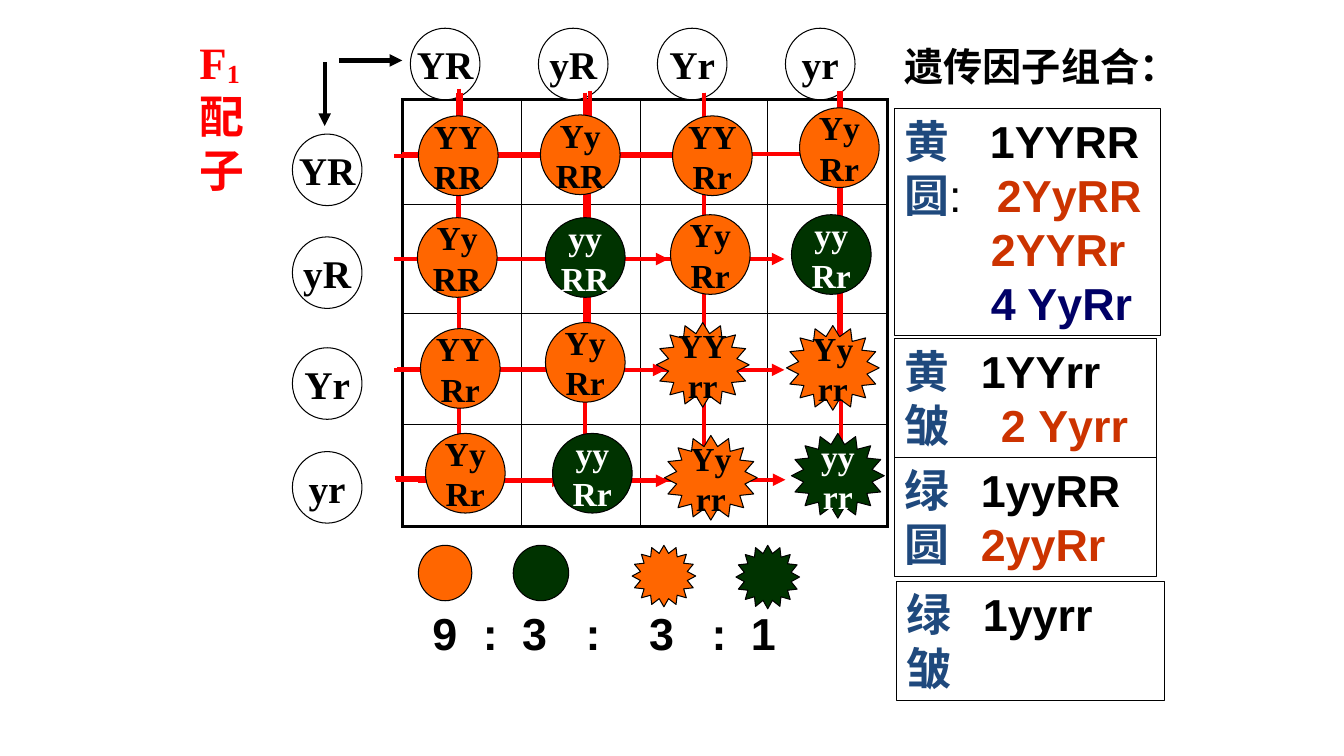
from dataclasses import dataclass

from lxml import etree
from pptx import Presentation
from pptx.dml.color import RGBColor
from pptx.enum.shapes import MSO_CONNECTOR, MSO_SHAPE
from pptx.enum.text import MSO_ANCHOR, MSO_AUTO_SIZE, PP_ALIGN
from pptx.oxml.ns import qn
from pptx.util import Pt

PX = 9144  # 100 px to the inch
ELLIPSE, STAR = MSO_SHAPE.OVAL, MSO_SHAPE.STAR_16_POINT
STRAIGHT = MSO_CONNECTOR.STRAIGHT
MIDDLE, LEFT, CENTER = MSO_ANCHOR.MIDDLE, PP_ALIGN.LEFT, PP_ALIGN.CENTER
SERIF, SANS, CJK = "Times New Roman", "Arial", "Noto Sans CJK SC"
COLORS = {
    "black": "000000", "white": "FFFFFF", "red": "FF0000", "yellow": "FF6600",
    "green": "003300", "blue": "1F497D", "rust": "CC3300", "navy": "000066",
}


@dataclass
class Span:
    text: str
    color: str = "black"
    bold: bool = True
    font: str = SANS


@dataclass
class Line:
    spans: list[Span]
    tabs: tuple[int, ...] = ()


@dataclass
class TextBox:
    x: int
    y: int
    w: int
    h: int
    lines: list[Line]
    framed: bool = True


@dataclass
class Offspring:
    """Genes, place, and the two arrows that meet at the offspring."""
    genes: str
    x: int
    y: int
    row_start: int
    row_end: int
    row_y: int
    col_x: int
    col_top: int

    @property
    def color(self) -> str:
        return "yellow" if "Y" in self.genes else "green"

    @property
    def round(self) -> bool:
        return "R" in self.genes


@dataclass
class Seed:
    shape: int
    color: str
    x: int
    w: int
    h: int


TABLE_X, TABLE_Y = 399, 99
COLUMNS, ROWS = (118, 118, 126, 119), (104, 108, 110, 101)
TOP_GAMETES = {"YR": 407, "yR": 534, "Yr": 652, "yr": 779}
LEFT_GAMETES = {"YR": 133, "yR": 235, "Yr": 345, "yr": 448}
OFFSPRING = [
    Offspring("YY RR", 415, 115, 394, 449, 155, 457, 92),
    Offspring("Yy RR", 536, 114, 404, 585, 153, 585, 90),
    Offspring("YY Rr", 667, 115, 391, 690, 155, 698, 92),
    Offspring("Yy Rr", 793, 107, 399, 821, 153, 832, 90),
    Offspring("Yy RR", 414, 216, 391, 446, 257, 454, 92),
    Offspring("yy RR", 541, 216, 391, 556, 257, 580, 92),
    Offspring("Yy Rr", 665, 213, 415, 663, 257, 698, 92),
    Offspring("yy Rr", 785, 213, 399, 778, 257, 832, 92),
    Offspring("YY Rr", 417, 326, 392, 447, 367, 455, 99),
    Offspring("Yy Rr", 541, 320, 394, 560, 366, 584, 98),
    Offspring("YY rr", 651, 320, 391, 660, 367, 698, 99),
    Offspring("Yy rr", 780, 323, 398, 778, 367, 832, 100),
    Offspring("Yy Rr", 422, 430, 392, 447, 474, 455, 88),
    Offspring("yy Rr", 548, 430, 415, 560, 477, 580, 92),
    Offspring("Yy rr", 659, 432, 415, 663, 477, 698, 92),
    Offspring("yy rr", 785, 430, 393, 779, 476, 834, 90),
]
LEGEND = [
    Seed(ELLIPSE, "yellow", 415, 53, 55), Seed(ELLIPSE, "green", 509, 55, 55),
    Seed(STAR, "yellow", 627, 63, 61), Seed(STAR, "green", 730, 63, 63),
]
TEXT_BOXES = [
    TextBox(188, 30, 69, 170, [
        Line([Span("F", "red", font=SERIF), Span("1", "red", font=SERIF), Span("配子", "red")]),
    ], framed=False),
    TextBox(383, 596, 539, 63, [
        Line([Span("\t9\t:\t3\t:\t3\t:\t1")], (36, 86, 125, 188, 251, 313, 352)),
    ], framed=False),
    TextBox(887, 108, 264, 225, [
        Line([Span("黄", "blue"), Span("\t1YYRR")], (85,)),
        Line([Span("圆", "blue"), Span(":", bold=False), Span("\t2YyRR", "rust")], (92,)),
        Line([Span("\t2YYRr", "rust")], (86,)),
        Line([Span("\t4 YyRr", "navy")], (86,)),
    ]),
    TextBox(887, 336, 260, 118, [
        Line([Span("黄", "blue", font=CJK), Span("\t1YYrr")], (76,)),
        Line([Span("皱", "blue", font=CJK), Span("\t2 Yyrr", "rust")], (96,)),
    ]),
    TextBox(887, 454, 260, 118, [
        Line([Span("绿", "blue", font=CJK), Span("\t1yyRR")], (76,)),
        Line([Span("圆", "blue", font=CJK), Span("\t2yyRr", "rust")], (76,)),
    ]),
    TextBox(889, 577, 266, 118, [
        Line([Span("绿", "blue", font=CJK), Span("\t1yyrr")], (76,)),
        Line([Span("皱", "blue", font=CJK)]),
    ]),
]


def rgb(name: str) -> RGBColor:
    return RGBColor.from_string(COLORS[name])


def px(*lengths: int) -> list[int]:
    return [n * PX for n in lengths]


def format_run(r, size: int, color: str, font: str, bold: bool = True) -> None:
    r.font.size, r.font.bold, r.font.name = Pt(size), bold, font
    r.font.color.rgb = rgb(color)
    if not r.text.isascii():
        etree.SubElement(r._r.get_or_add_rPr(), qn("a:ea"), typeface=CJK)


def add_figure(slide, shape: int, x: int, y: int, w: int, h: int, fill: str,
               text: str = "", size: int = 24, color: str = "black") -> None:
    sp = slide.shapes.add_shape(shape, *px(x, y, w, h))
    sp.shadow.inherit = False
    sp.fill.solid()
    sp.fill.fore_color.rgb = rgb(fill)
    sp.line.color.rgb, sp.line.width = rgb("black"), Pt(0.75)
    tf = sp.text_frame
    tf.text, tf.word_wrap, tf.vertical_anchor = text, False, MIDDLE
    for p in tf.paragraphs:
        p.alignment = CENTER
        for r in p.runs:
            format_run(r, size, color, SERIF)


def add_arrow(slide, x1: int, y1: int, x2: int, y2: int, color: str) -> None:
    cxn = slide.shapes.add_connector(STRAIGHT, *px(x1, y1, x2, y2))
    cxn.line.color.rgb, cxn.line.width = rgb(color), Pt(3)
    etree.SubElement(cxn.line._get_or_add_ln(), qn("a:tailEnd"), type="triangle")
    etree.SubElement(cxn._element.spPr, qn("a:effectLst"))


def add_text_box(slide, box: TextBox) -> None:
    sp = slide.shapes.add_textbox(*px(box.x, box.y, box.w, box.h))
    if box.framed:
        sp.line.color.rgb, sp.line.width = rgb("black"), Pt(0.75)
    tf = sp.text_frame
    tf.word_wrap = True
    for i, line in enumerate(box.lines):
        p = tf.add_paragraph() if i else tf.paragraphs[0]
        if line.tabs:
            tab_list = etree.SubElement(p._p.get_or_add_pPr(), qn("a:tabLst"))
            for pos in line.tabs:
                etree.SubElement(tab_list, qn("a:tab"), pos=str(pos * PX), algn="l")
        p.line_spacing = Pt(38.5)
        for span in line.spans:
            r = p.add_run()
            r.text = span.text
            format_run(r, 32, span.color, span.font, span.bold)
            if span.text == "1":
                r._r.get_or_add_rPr().set("baseline", "-10000")


def add_square(slide) -> None:
    """Draw the empty Punnett square with a heavier outer border."""
    frame = slide.shapes.add_table(len(ROWS), len(COLUMNS),
                                   *px(TABLE_X, TABLE_Y, sum(COLUMNS), sum(ROWS)))
    table = frame.table
    table.first_row = table.horz_banding = False
    for column, w in zip(table.columns, COLUMNS):
        column.width = w * PX
    for i, h in enumerate(ROWS):
        table.rows[i].height = h * PX
        for j in range(len(COLUMNS)):
            outer = {"lnL": j == 0, "lnR": j == len(COLUMNS) - 1,
                     "lnT": i == 0, "lnB": i == len(ROWS) - 1}
            cell = table.cell(i, j)
            tcPr = cell._tc.get_or_add_tcPr()
            for side, heavy in outer.items():
                ln = etree.SubElement(tcPr, qn(f"a:{side}"), w=str(Pt(2.25 if heavy else 1)))
                fill = etree.SubElement(ln, qn("a:solidFill"))
                etree.SubElement(fill, qn("a:srgbClr"), val=COLORS["black"])
            cell.fill.background()


def set_title(slide) -> None:
    sp = slide.shapes.title
    sp.left, sp.top, sp.width, sp.height = px(887, 37, 299, 57)
    tf = sp.text_frame
    tf.text = "遗传因子组合："
    tf.word_wrap, tf.auto_size, tf.vertical_anchor = True, MSO_AUTO_SIZE.NONE, MIDDLE
    p = tf.paragraphs[0]
    p.alignment, p.line_spacing = LEFT, Pt(34)
    format_run(p.runs[0], 28, "black", SANS)


def main() -> None:
    prs = Presentation()
    prs.slide_width, prs.slide_height = px(1333, 750)
    slide = prs.slides.add_slide(prs.slide_layouts[5])
    set_title(slide)
    add_square(slide)
    for gamete, x in TOP_GAMETES.items():
        add_figure(slide, ELLIPSE, x, 28, 69, 71, "white", gamete, 28)
    for gamete, y in LEFT_GAMETES.items():
        add_figure(slide, ELLIPSE, 290, y, 69, 71, "white", gamete, 28)
    add_arrow(slide, 336, 60, 399, 60, "black")
    add_arrow(slide, 322, 62, 322, 125, "black")
    for o in OFFSPRING:
        add_arrow(slide, o.row_start, o.row_y, o.row_end, o.row_y, "red")
        add_arrow(slide, o.col_x, o.col_top, o.col_x, o.row_y, "red")
    for seed in LEGEND:
        add_figure(slide, seed.shape, seed.x, 541, seed.w, seed.h, seed.color)
    for o in OFFSPRING:
        shape, w, h = (ELLIPSE, 79, 79) if o.round else (STAR, 92, 84)
        add_figure(slide, shape, o.x, o.y, w, h, o.color, o.genes.replace(" ", "\n"),
                   color="black" if o.color == "yellow" else "white")
    for box in TEXT_BOXES:
        add_text_box(slide, box)
    prs.save("out.pptx")


if __name__ == "__main__":
    main()
